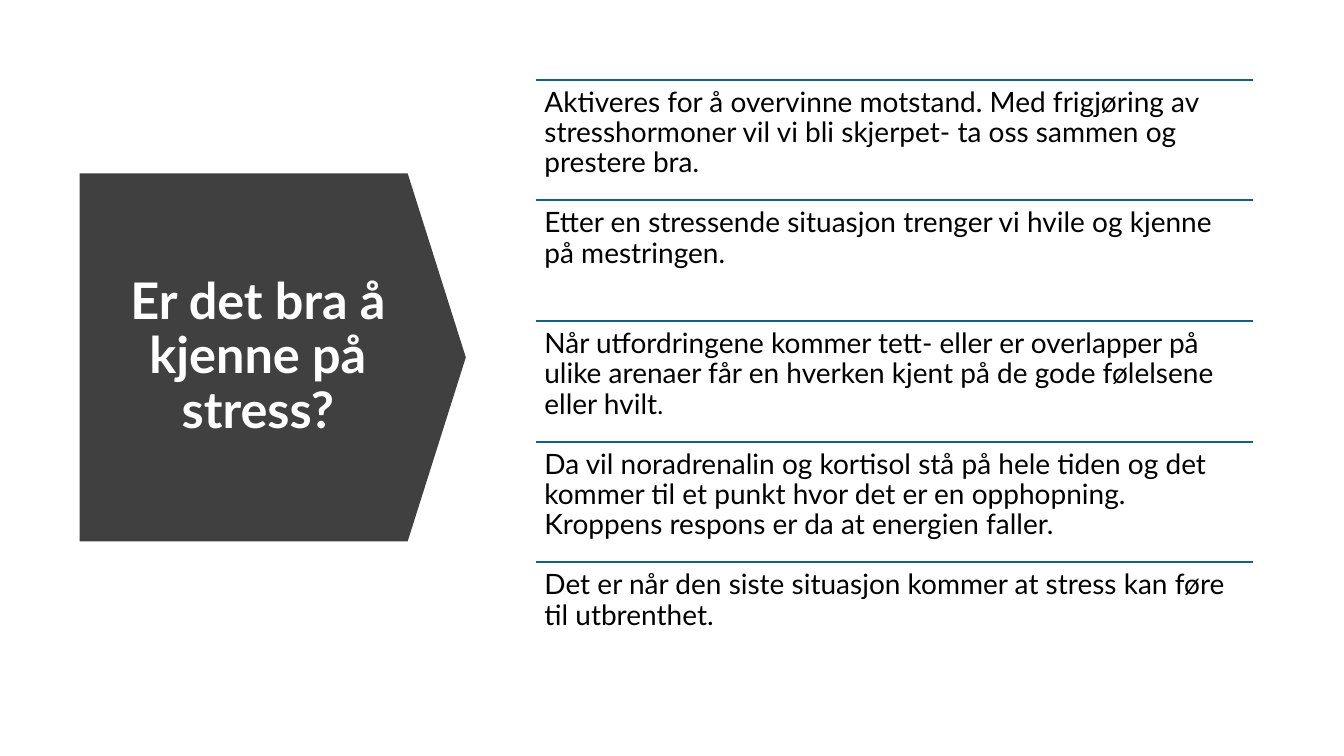
from lxml.etree import SubElement
from pptx import Presentation
from pptx.dml.color import RGBColor
from pptx.enum.shapes import MSO_CONNECTOR, MSO_SHAPE
from pptx.enum.text import MSO_ANCHOR, PP_ALIGN
from pptx.oxml.ns import qn
from pptx.util import Cm, Pt

FONT = "Lato"
TITLE = "Er det bra å kjenne på stress?"
STATEMENTS = [
    [("Aktiveres for å overvinne motstand. Med frigjøring av stresshormoner vil vi "
      "bli skjerpet- ta oss sammen og prestere bra.", 20)],
    [("Etter en stressende situasjon trenger vi hvile og kjenne på mestringen.", 20)],
    [("Når utfordringene kommer tett- eller er overlapper på ulike arenaer får en "
      "hverken kjent på de gode følelsene eller hvilt", 20), (".", 18)],
    [("Da vil noradrenalin og kortisol stå på hele tiden og det kommer til et punkt "
      "hvor det er en opphopning. Kroppens respons er da at energien faller.", 20)],
    [("Det er når den siste situasjon kommer at stress kan føre til utbrenthet.", 20)],
]
LIST_LEFT, LIST_TOP, LIST_WIDTH, ROW_HEIGHT = 13.51, 2.01, 18.06, 3.04


def color(value):
    """Turn a hex string into a colour."""
    return RGBColor.from_string(value)


def add_arrow(page, left, top, width, height):
    """Add the dark arrow that points from the title to the list."""
    arrow = page.shapes.add_shape(
        MSO_SHAPE.DOWN_ARROW, Cm(left), Cm(top), Cm(width), Cm(height))
    arrow.rotation = 270
    arrow.adjustments[0] = 1
    arrow.adjustments[1] = 0.158
    arrow.shadow.inherit = False
    arrow.fill.solid()
    arrow.fill.fore_color.rgb = color("404040")
    arrow.line.fill.background()


def add_text(page, left, top, width, height, spans, ink):
    """Add a wrapping one-paragraph text box and return it."""
    box = page.shapes.add_textbox(Cm(left), Cm(top), Cm(width), Cm(height))
    box.text_frame.word_wrap = True
    para = box.text_frame.paragraphs[0]
    para.line_spacing = 0.9
    para.font.name = FONT
    para.font.color.rgb = color(ink)
    for words, size in spans:
        span = para.add_run()
        span.text = words
        span.font.size = Pt(size)
    return box


def add_title(page):
    """Add the centred bold title on the arrow."""
    frame = add_text(page, 2.84, 5.46, 7.32, 7.09, [(TITLE, 36)], "FFFFFF").text_frame
    frame.vertical_anchor = MSO_ANCHOR.MIDDLE
    frame.paragraphs[0].alignment = PP_ALIGN.CENTER
    frame.paragraphs[0].font.bold = True


def add_rule(page, top):
    """Add the line above one statement."""
    rule = page.shapes.add_connector(
        MSO_CONNECTOR.STRAIGHT, Cm(LIST_LEFT), Cm(top), Cm(LIST_LEFT + LIST_WIDTH), Cm(top))
    rule.line.color.rgb = color("156082")
    rule.line.width = Pt(1.5)
    SubElement(rule._element.spPr, qn("a:effectLst"))


def add_statement(page, top, spans):
    """Add one ruled statement of the list."""
    add_rule(page, top)
    frame = add_text(page, LIST_LEFT, top, LIST_WIDTH, ROW_HEIGHT, spans, "000000").text_frame
    frame.margin_left = frame.margin_right = Cm(0.21)
    frame.margin_top = frame.margin_bottom = Cm(0.21)


def main():
    """Build and save the slide."""
    deck = Presentation()
    deck.slide_width, deck.slide_height = Cm(33.87), Cm(19.05)
    page = deck.slides.add_slide(deck.slide_layouts[6])
    add_arrow(page, 2.24, 4.14, 9.27, 9.73)
    add_title(page)
    for row, spans in enumerate(STATEMENTS):
        add_statement(page, LIST_TOP + row * ROW_HEIGHT, spans)
    deck.save("out.pptx")


if __name__ == "__main__":
    main()
